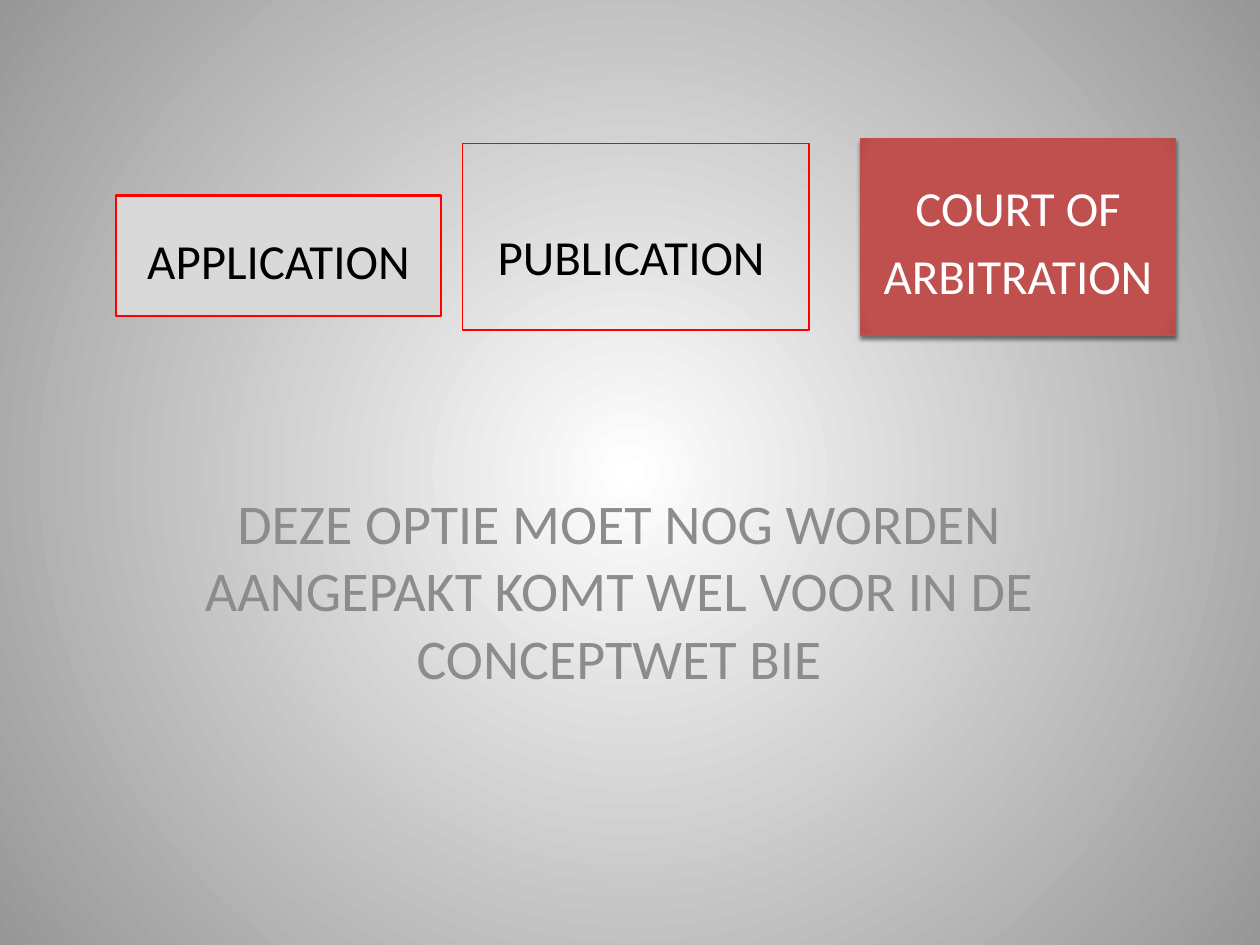
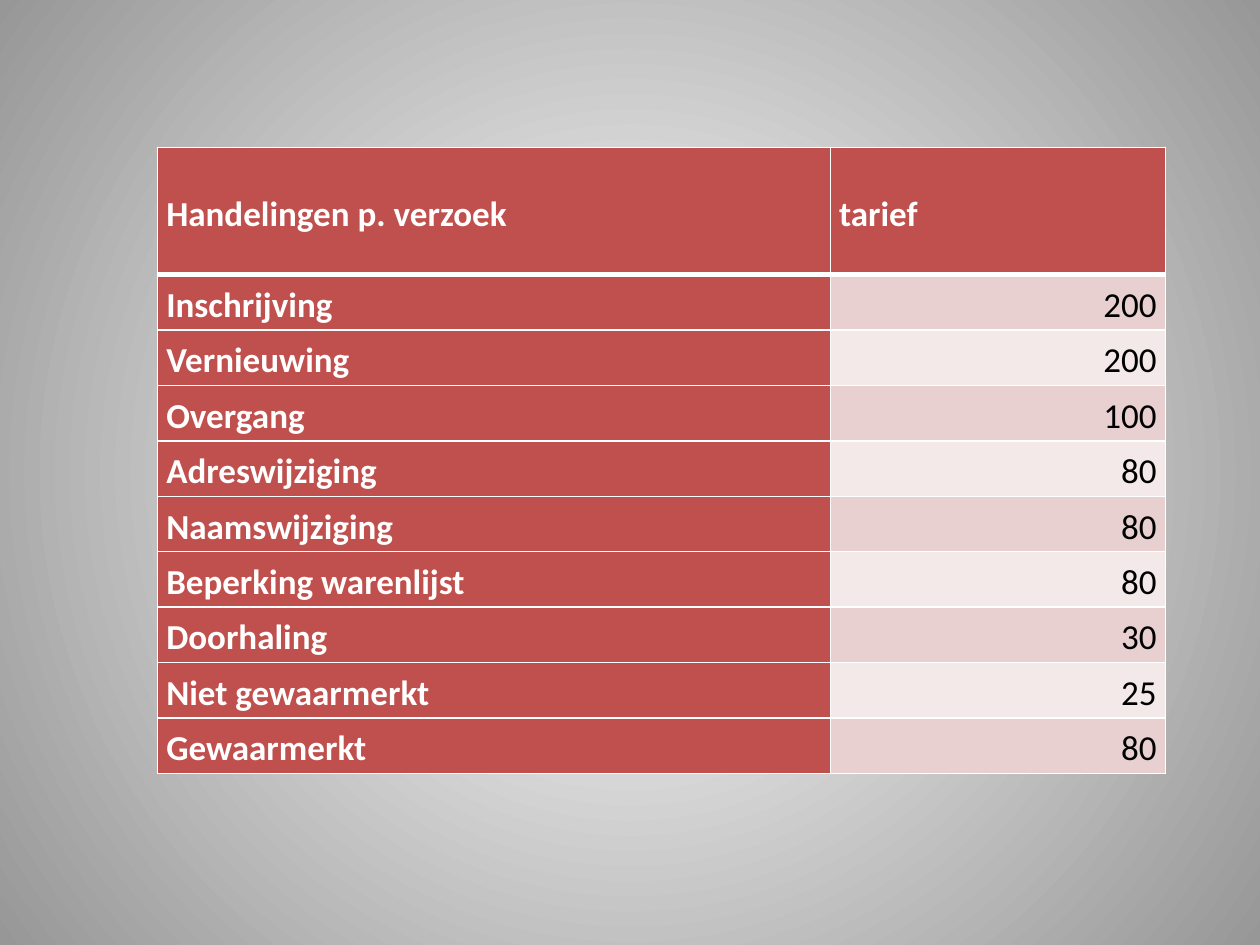
"""Build two slides: the registration options and the table of tariffs."""
from pptx import Presentation
from pptx.dml.color import RGBColor
from pptx.enum.shapes import MSO_SHAPE as SHAPE
from pptx.enum.text import MSO_ANCHOR as ANCHOR, PP_ALIGN as ALIGN
from pptx.oxml import parse_xml
from pptx.oxml.ns import nsdecls, qn
from pptx.util import Inches, Pt

FONT = "Calibri"
WHITE = RGBColor(0xFF, 0xFF, 0xFF)
BLACK = RGBColor(0, 0, 0)
RED = RGBColor(0xFF, 0, 0)
BRICK = RGBColor(0xC0, 0x50, 0x4D)
DARK_BRICK = RGBColor(0xB3, 0x4B, 0x48)
PINK = RGBColor(0xE8, 0xD0, 0xD0)
PALE_PINK = RGBColor(0xF4, 0xE9, 0xE9)
SILVER = RGBColor(0xD9, 0xD9, 0xD9)
GREY = RGBColor(0x8C, 0x8C, 0x8C)
MID_GREY = RGBColor(0x97, 0x97, 0x97)

BACKDROP = [(0, WHITE), (100, MID_GREY)]
COURT_STOPS = [(0, BRICK), (90, BRICK), (100, DARK_BRICK)]

SPACED = dict(alignment=ALIGN.CENTER, line_spacing=1.15, space_after=Pt(10))
MIDDLE = dict(vertical_anchor=ANCHOR.MIDDLE)
LOWERED = dict(vertical_anchor=ANCHOR.TOP, margin_top=Inches(0.66),
               margin_left=Inches(0.28))

COURT = dict(text="COURT OF ARBITRATION", at=(6.83, 1.1, 2.5, 1.56), fill=BRICK,
             line=(BRICK, 0.79), color=WHITE, frame=MIDDLE, para=SPACED)
PUBLICATION = dict(text="PUBLICATION", at=(3.67, 1.14, 2.75, 1.48), fill=None,
                   line=(RED, 0.75), color=BLACK, frame=LOWERED,
                   para=dict(alignment=ALIGN.LEFT))
APPLICATION = dict(text="APPLICATION", at=(0.92, 1.55, 2.58, 0.96), fill=SILVER,
                   line=(RED, 1.5), color=BLACK, frame=MIDDLE, para=SPACED)
REMARK = "DEZE OPTIE MOET NOG WORDEN AANGEPAKT KOMT WEL VOOR IN DE CONCEPTWET BIE"
REMARK_AT = (1.33, 3.83, 7.17, 2.33)

TARIFFS = [
    ("Handelingen p. verzoek", "tarief"),
    ("Inschrijving", 200),
    ("Vernieuwing", 200),
    ("Overgang", 100),
    ("Adreswijziging", 80),
    ("Naamswijziging", 80),
    ("Beperking warenlijst", 80),
    ("Doorhaling", 30),
    ("Niet gewaarmerkt", 25),
    ("Gewaarmerkt", 80),
]
TABLE_AT = (1.25, 1.17, 8, 4.99)
COL_WIDTHS = (5.34, 2.66)
HEADER_H, ROW_H = 1.01, 0.44
CELL = dict(vertical_anchor=ANCHOR.MIDDLE, margin_left=Inches(0.07),
            margin_right=Inches(0.07), margin_top=0, margin_bottom=0)


def apply(obj, values):
    for name, value in values.items():
        setattr(obj, name, value)


def write(tf, text, size, color, para, bold=False):
    p = tf.paragraphs[0]
    apply(p, para)
    r = p.add_run()
    r.text = text
    apply(r.font, dict(name=FONT, size=Pt(size), bold=bold))
    r.font.color.rgb = color


def radial(parent, stops, focus):
    """Replace the solid fill in parent by a circular gradient."""
    gs = "".join(f'<a:gs pos="{pos * 1000}"><a:srgbClr val="{color}"/></a:gs>'
                 for pos, color in stops)
    rect = " ".join(f'{side}="{focus * 1000}"' for side in "ltrb")
    solid = parent.find(qn("a:solidFill"))
    parent.replace(solid, parse_xml(
        f'<a:gradFill {nsdecls("a")} rotWithShape="1"><a:gsLst>{gs}</a:gsLst>'
        f'<a:path path="circle"><a:fillToRect {rect}/></a:path></a:gradFill>'))


def add_box(s, box):
    sp = s.shapes.add_shape(SHAPE.RECTANGLE, *map(Inches, box["at"]))
    sp.shadow.inherit = False
    if box["fill"] is None:
        sp.fill.background()
    else:
        sp.fill.solid()
        sp.fill.fore_color.rgb = box["fill"]
    color, width = box["line"]
    sp.line.color.rgb = color
    sp.line.width = Pt(width)
    tf = sp.text_frame
    tf.word_wrap = True
    apply(tf, box["frame"])
    write(tf, box["text"], 28, box["color"], box["para"])
    return sp


def add_shadow(sp):
    effects = sp._element.spPr.find(qn("a:effectLst"))
    effects.append(parse_xml(
        f'<a:outerShdw {nsdecls("a")} blurRad="{Pt(2.5)}" dist="{Pt(2)}" dir="5400000" '
        'rotWithShape="0"><a:srgbClr val="000000"><a:alpha val="50000"/></a:srgbClr>'
        '</a:outerShdw>'))


def set_borders(cell, widths):
    tcPr = cell._tc.get_or_add_tcPr()
    for i, (side, width) in enumerate(widths.items()):
        tcPr.insert(i, parse_xml(
            f'<a:ln{side} {nsdecls("a")} w="{Pt(width)}"><a:solidFill>'
            f'<a:srgbClr val="{WHITE}"/></a:solidFill></a:ln{side}>'))


def options_slide(s):
    court = add_box(s, COURT)
    radial(court._element.spPr, COURT_STOPS, 100)
    add_shadow(court)
    tf = s.shapes.add_textbox(*map(Inches, REMARK_AT)).text_frame
    tf.word_wrap = True
    write(tf, REMARK, 32, GREY, dict(alignment=ALIGN.CENTER))
    for box in (PUBLICATION, APPLICATION):
        add_box(s, box)


def tariff_slide(s):
    table = s.shapes.add_table(len(TARIFFS), len(COL_WIDTHS),
                               *map(Inches, TABLE_AT)).table
    for col, width in zip(table.columns, COL_WIDTHS):
        col.width = Inches(width)
    for i, row in enumerate(TARIFFS):
        table.rows[i].height = Inches(ROW_H if i else HEADER_H)
        for j, value in enumerate(row):
            cell = table.cell(i, j)
            heading = i == 0 or j == 0
            apply(cell, CELL)
            cell.fill.solid()
            cell.fill.fore_color.rgb = BRICK if heading else PINK if i % 2 else PALE_PINK
            set_borders(cell, dict(L=1, R=1, T=3 if i == 1 else 1, B=1 if i else 3))
            para = dict(alignment=ALIGN.LEFT if heading else ALIGN.RIGHT,
                        line_spacing=1.15)
            write(cell.text_frame, str(value), 20, WHITE if heading else BLACK,
                  para, heading)


def main():
    prs = Presentation()
    prs.slide_width, prs.slide_height = Inches(10), Inches(7.5)
    master = prs.slide_master
    master.background.fill.solid()
    radial(master._element.find(".//" + qn("p:bgPr")), BACKDROP, 50)
    for build in (options_slide, tariff_slide):
        build(prs.slides.add_slide(prs.slide_layouts[6]))
    prs.save("out.pptx")


if __name__ == "__main__":
    main()
